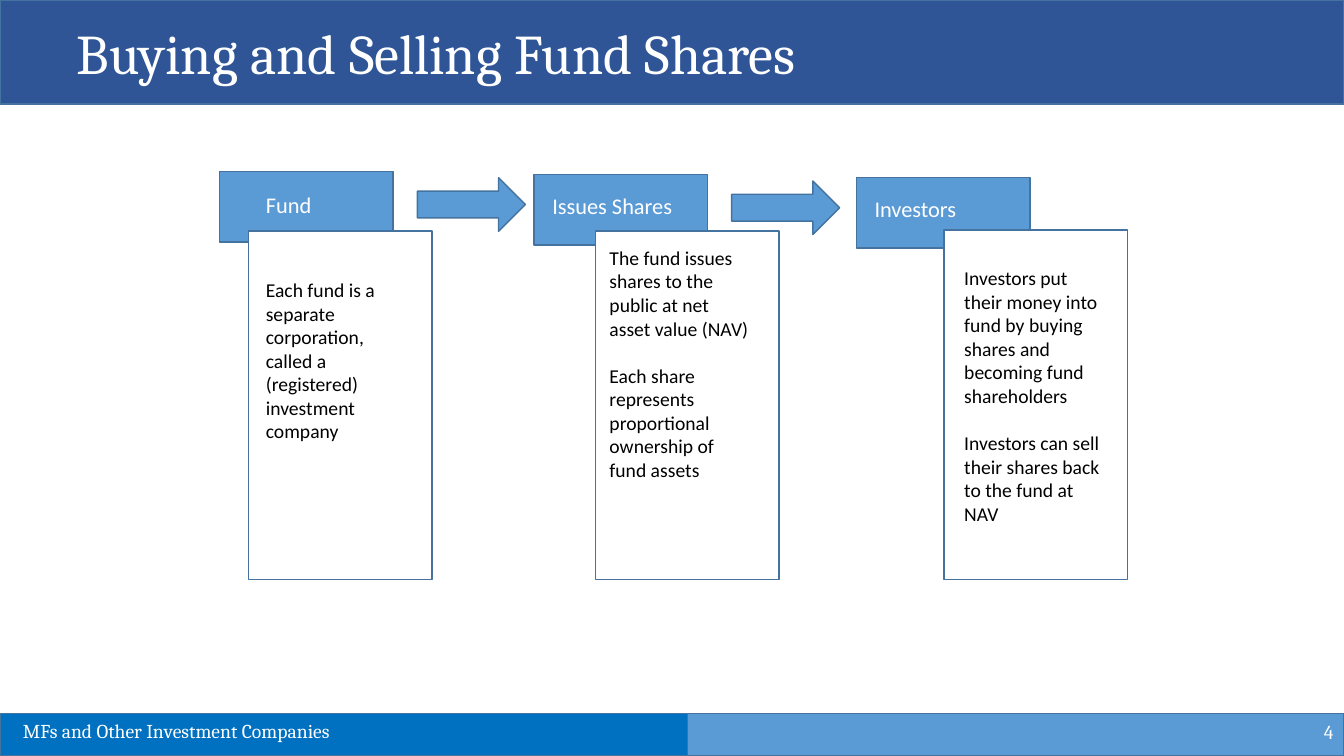
from dataclasses import dataclass

from pptx import Presentation
from pptx.dml.color import RGBColor
from pptx.enum.shapes import MSO_SHAPE as Preset
from pptx.enum.text import MSO_ANCHOR as Anchor, MSO_AUTO_SIZE as AutoSize, PP_ALIGN as Align
from pptx.shapes.autoshape import Shape
from pptx.slide import Slide
from pptx.util import Cm, Pt

NAVY = RGBColor(0x2F, 0x55, 0x97)
STRONG_BLUE = RGBColor(0x00, 0x70, 0xC0)
SOFT_BLUE = RGBColor(0x5B, 0x9B, 0xD5)
OUTLINE = RGBColor(0x43, 0x73, 0x9E)
WHITE = RGBColor(0xFF, 0xFF, 0xFF)
BLACK = RGBColor(0x00, 0x00, 0x00)

SLIDE_WIDTH, SLIDE_HEIGHT = 33.87, 19.05
FOOTER_TOP, FOOTER_SPLIT = 17.98, 17.32
HEADER_WIDTH, HEADER_HEIGHT = 4.37, 1.78
PANEL_WIDTH, PANEL_BOTTOM = 4.62, 14.6
ARROW_SHIFT_X, ARROW_SHIFT_Y = 4.98, 0.16
DETAIL_WIDTH = 4.09
DETAIL_GAP = Pt(17)


@dataclass(frozen=True)
class Area:
    """A rectangle on the slide, in centimetres."""
    left: float
    top: float
    width: float
    height: float

    def lengths(self) -> tuple[Cm, Cm, Cm, Cm]:
        return Cm(self.left), Cm(self.top), Cm(self.width), Cm(self.height)


@dataclass(frozen=True)
class TextStyle:
    font: str
    size: int
    color: RGBColor
    align: Align = Align.LEFT


@dataclass(frozen=True)
class Stage:
    """One step of the flow: a header, its label, and a panel of details."""
    name: str
    details: tuple[str, ...]
    header: tuple[float, float]
    label: Area
    panel: tuple[float, float]
    detail: Area
    leads_on: bool = True


TITLE_STYLE = TextStyle("Cambria", 40, WHITE)
FOOTER_STYLE = TextStyle("Cambria", 14, WHITE)
NUMBER_STYLE = TextStyle("Cambria", 14, WHITE, Align.RIGHT)
LABEL_STYLE = TextStyle("Calibri", 16, WHITE)
DETAIL_STYLE = TextStyle("Calibri", 14, BLACK)

STAGES = (
    Stage("Fund",
          ("Each fund is a separate corporation, called a (registered) investment company",),
          header=(5.54, 4.32), label=Area(6.45, 4.7, 2.31, 0.94),
          panel=(6.27, 5.82), detail=Area(6.45, 6.88, DETAIL_WIDTH, 4.45)),
    Stage("Issues Shares",
          ("The fund issues shares to the public at net asset value (NAV)",
           "Each share represents proportional ownership of fund assets"),
          header=(13.46, 4.4), label=Area(13.67, 4.72, 4.17, 0.94),
          panel=(15.01, 5.82), detail=Area(15.11, 6.07, DETAIL_WIDTH, 6.83)),
    Stage("Investors",
          ("Investors put their money into fund by buying shares and becoming fund shareholders",
           "Investors can sell their shares back to the fund at NAV"),
          header=(21.59, 4.47), label=Area(21.79, 4.8, 4.17, 0.94),
          panel=(23.79, 5.8), detail=Area(24.05, 6.58, DETAIL_WIDTH, 8.03),
          leads_on=False),
)


def add_block(page: Slide, area: Area, fill: RGBColor, preset: Preset = Preset.RECTANGLE) -> Shape:
    block = page.shapes.add_shape(preset, *area.lengths())
    block.shadow.inherit = False
    block.fill.solid()
    block.fill.fore_color.rgb = fill
    block.line.color.rgb = OUTLINE
    block.line.width = Pt(1)
    return block


def write(box: Shape, texts: tuple[str, ...], style: TextStyle, anchor: Anchor = Anchor.TOP) -> None:
    frame = box.text_frame
    frame.word_wrap = True
    frame.auto_size = AutoSize.NONE
    frame.vertical_anchor = anchor
    for index, text in enumerate(texts):
        para = frame.add_paragraph() if index else frame.paragraphs[0]
        para.text = text
        para.alignment = style.align
        para.line_spacing = 1.0
        para.space_before = DETAIL_GAP if index else Pt(0)
        para.font.name = style.font
        para.font.size = Pt(style.size)
        para.font.color.rgb = style.color


def add_text(page: Slide, area: Area, texts: tuple[str, ...], style: TextStyle,
             anchor: Anchor = Anchor.TOP) -> None:
    write(page.shapes.add_textbox(*area.lengths()), texts, style, anchor)


def add_title(page: Slide) -> None:
    banner = add_block(page, Area(0, 0, SLIDE_WIDTH, 2.62), NAVY)
    title = page.shapes.title
    title.left, title.top, title.width, title.height = Area(1.68, 0.33, 30.68, 1.96).lengths()
    write(title, ("Buying and Selling Fund Shares",), TITLE_STYLE)
    # The banner lies behind the title
    title._element.addprevious(banner._element)


def add_footer(page: Slide) -> None:
    height = SLIDE_HEIGHT - FOOTER_TOP
    add_block(page, Area(0, FOOTER_TOP, FOOTER_SPLIT, height), STRONG_BLUE)
    add_block(page, Area(FOOTER_SPLIT, FOOTER_TOP, SLIDE_WIDTH - FOOTER_SPLIT, height), SOFT_BLUE)
    add_text(page, Area(26.24, 17.93, 7.62, 1.02), ("4",), NUMBER_STYLE, Anchor.MIDDLE)
    add_text(page, Area(0.33, 18.0, 14.07, 0.86), ("MFs and Other Investment Companies",), FOOTER_STYLE)


def add_stage(page: Slide, stage: Stage) -> None:
    left, top = stage.header
    if stage.leads_on:
        arrow = Area(left + ARROW_SHIFT_X, top + ARROW_SHIFT_Y, 2.72, 1.35)
        add_block(page, arrow, SOFT_BLUE, Preset.RIGHT_ARROW)
    add_block(page, Area(left, top, HEADER_WIDTH, HEADER_HEIGHT), SOFT_BLUE)
    add_text(page, stage.label, (stage.name,), LABEL_STYLE)
    panel_left, panel_top = stage.panel
    add_block(page, Area(panel_left, panel_top, PANEL_WIDTH, PANEL_BOTTOM - panel_top), WHITE)
    add_text(page, stage.detail, stage.details, DETAIL_STYLE)


def main() -> None:
    deck = Presentation()
    deck.slide_width, deck.slide_height = Cm(SLIDE_WIDTH), Cm(SLIDE_HEIGHT)
    page = deck.slides.add_slide(deck.slide_layouts.get_by_name("Title Only"))
    add_title(page)
    add_footer(page)
    for stage in STAGES:
        add_stage(page, stage)
    deck.save("out.pptx")


if __name__ == "__main__":
    main()
